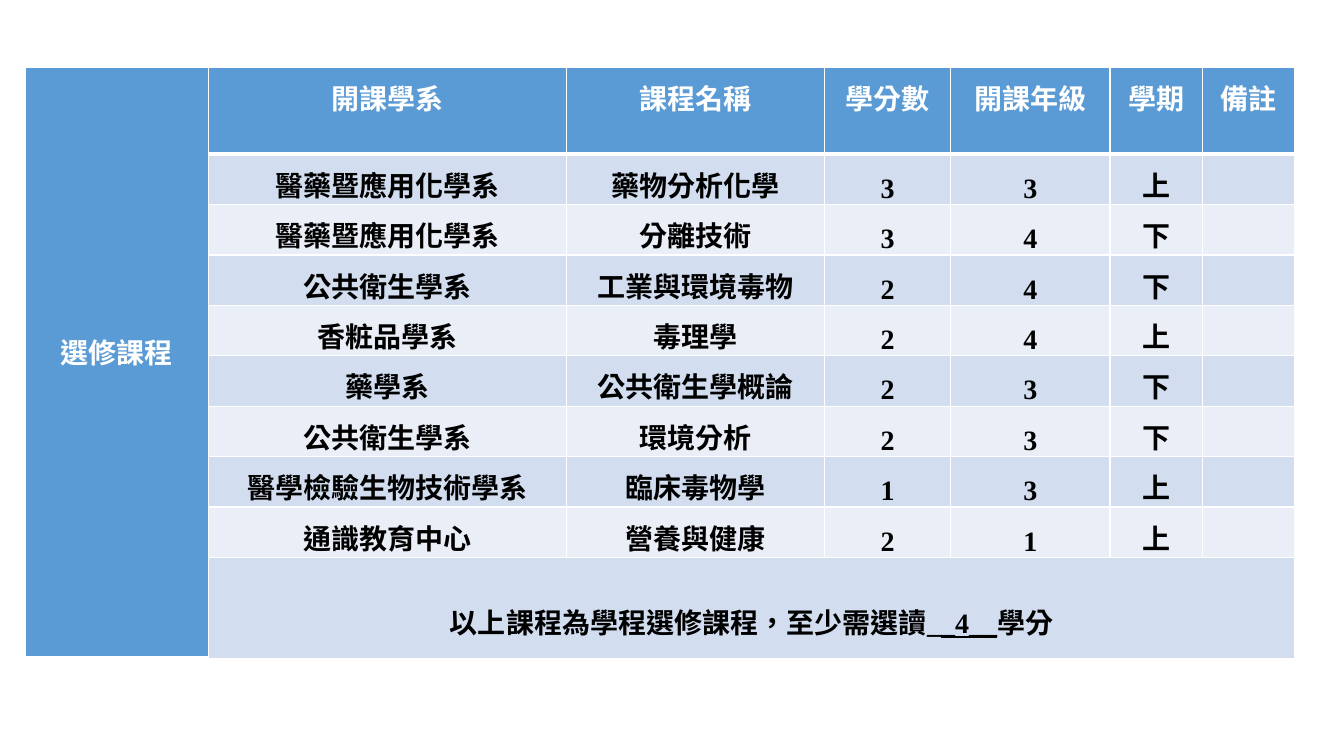
from dataclasses import dataclass
from typing import NamedTuple

from lxml import etree
from pptx import Presentation
from pptx import util as u
from pptx.dml.color import RGBColor
from pptx.enum import lang, text
from pptx.oxml import ns


@dataclass(frozen=True)
class Theme:
    font: str = "Times New Roman"
    size: int = 20
    line_spacing: int = 12
    white: str = "FFFFFF"
    black: str = "000000"
    header: str = "5B9BD5"
    bands: tuple[str, str] = ("D2DEEF", "EAEFF7")


class Course(NamedTuple):
    department: str
    name: str
    credits: str
    grade: str
    semester: str


THEME = Theme()
HEADINGS = ["開課學系", "課程名稱", "學分數", "開課年級", "學期", "備註"]
COURSES = [
    Course("醫藥暨應用化學系", "藥物分析化學", "3", "3", "上"),
    Course("醫藥暨應用化學系", "分離技術", "3", "4", "下"),
    Course("公共衛生學系", "工業與環境毒物", "2", "4", "下"),
    Course("香粧品學系", "毒理學", "2", "4", "上"),
    Course("藥學系", "公共衛生學概論", "2", "3", "下"),
    Course("公共衛生學系", "環境分析", "2", "3", "下"),
    Course("醫學檢驗生物技術學系", "臨床毒物學", "1", "3", "上"),
    Course("通識教育中心", "營養與健康", "2", "1", "上"),
]
COLUMN_WIDTHS = [1.82, 3.55, 2.56, 1.25, 1.58, 0.92, 0.91]
ROW_HEIGHTS = [0.86] + [0.5] * len(COURSES) + [1]


def add_text(paragraph, content: str, *, color: str = THEME.black, underline: bool = False) -> None:
    paragraph.alignment = text.PP_ALIGN.CENTER
    paragraph.line_spacing = u.Pt(THEME.line_spacing)
    run = paragraph.add_run()
    run.text = content
    font = run.font
    font.name = THEME.font
    font.size = u.Pt(THEME.size)
    font.bold = True
    font.underline = underline
    font.color.rgb = RGBColor.from_string(color)
    font.language_id = lang.MSO_LANGUAGE_ID.TRADITIONAL_CHINESE


def format_cell(cell, fill: str, top: float = 0.33):
    cell.margin_left = cell.margin_right = u.Inches(0.07)
    cell.margin_top = u.Inches(top)
    cell.margin_bottom = 0
    cell.fill.solid()
    cell.fill.fore_color.rgb = RGBColor.from_string(fill)
    return cell.text_frame.paragraphs[0]


def add_header_borders(cell) -> None:
    properties = cell._tc.get_or_add_tcPr()
    for side, points in (("lnL", 1), ("lnR", 1), ("lnT", 1), ("lnB", 3)):
        line = etree.SubElement(properties, ns.qn(f"a:{side}"), w=str(u.Pt(points)))
        fill = etree.SubElement(line, ns.qn("a:solidFill"))
        etree.SubElement(fill, ns.qn("a:srgbClr"), val=THEME.white)


def add_course_table(slide) -> None:
    table = slide.shapes.add_table(
        len(ROW_HEIGHTS), len(COLUMN_WIDTHS),
        u.Inches(0.25), u.Inches(0.67),
        u.Inches(sum(COLUMN_WIDTHS)), u.Inches(sum(ROW_HEIGHTS)),
    ).table
    for column, width in zip(table.columns, COLUMN_WIDTHS):
        column.width = u.Inches(width)
    for row, height in zip(table.rows, ROW_HEIGHTS):
        row.height = u.Inches(height)

    last_row, last_column = len(ROW_HEIGHTS) - 1, len(COLUMN_WIDTHS) - 1
    category = table.cell(0, 0)
    category.merge(table.cell(last_row, 0))
    category.vertical_anchor = text.MSO_ANCHOR.MIDDLE
    add_header_borders(category)
    add_text(format_cell(category, THEME.header, top=0), "選修課程", color=THEME.white)

    for column, heading in enumerate(HEADINGS, 1):
        cell = table.cell(0, column)
        add_header_borders(cell)
        add_text(format_cell(cell, THEME.header), heading, color=THEME.white)

    for row, course in enumerate(COURSES, 1):
        band = THEME.bands[(row - 1) % 2]
        for column, value in enumerate(course, 1):
            add_text(format_cell(table.cell(row, column), band), value)
        format_cell(table.cell(row, last_column), band, top=0)

    summary = table.cell(last_row, 1)
    summary.merge(table.cell(last_row, last_column))
    paragraph = format_cell(summary, THEME.bands[0], top=0.67)
    add_text(paragraph, "以上課程為學程選修課程，至少需選讀_")
    add_text(paragraph, "_4__", underline=True)
    add_text(paragraph, "學分")


def main() -> None:
    presentation = Presentation()
    presentation.slide_width = u.Inches(13.33)
    presentation.slide_height = u.Inches(7.5)
    slide = presentation.slides.add_slide(presentation.slide_layouts[6])
    add_course_table(slide)
    presentation.save("out.pptx")


if __name__ == "__main__":
    main()
